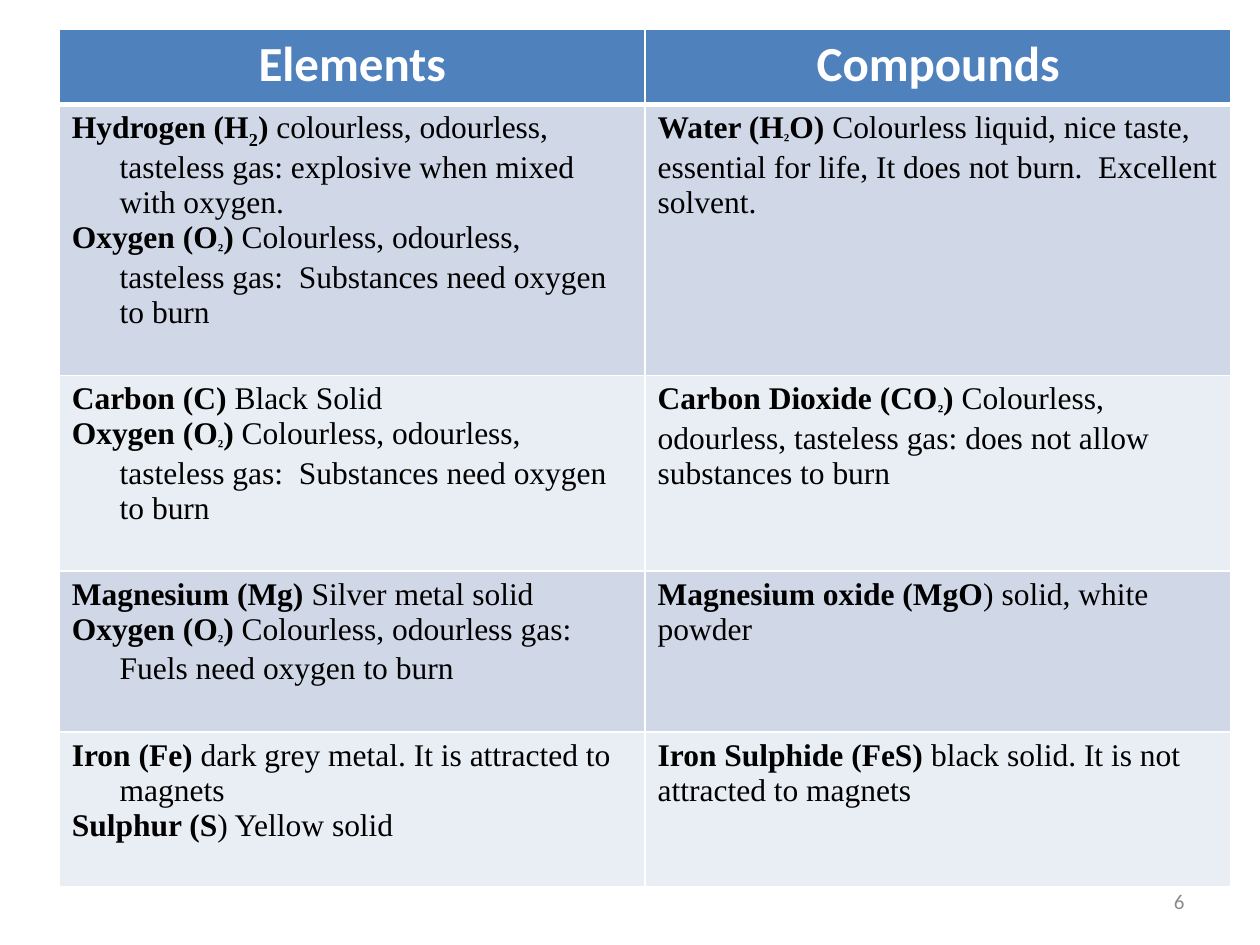
from lxml import etree
from pptx import Presentation
from pptx.dml.color import RGBColor
from pptx.enum.text import MSO_ANCHOR, PP_ALIGN
from pptx.oxml.ns import qn
from pptx.util import Inches, Pt

CENTER, RIGHT = PP_ALIGN.CENTER, PP_ALIGN.RIGHT
MIDDLE = MSO_ANCHOR.MIDDLE

HEADER = {"name": "Calibri", "size": Pt(28), "bold": True}
BODY = {"name": "Times New Roman", "size": Pt(18)}
NUMBER = {"name": "Calibri", "size": Pt(12), "bold": False}
BAND_FILLS = ["D0D8E8", "E9EDF4"]
ROW_HEIGHTS = [0.6, 2.15, 1.55, 1.28, 1.23]
HEADINGS = ["Elements", "Compounds"]

OXYGEN = ("Oxygen (O_²_)", " Colourless, odourless, tasteless gas:  Substances need oxygen to burn")
ROWS = [
    ([("Hydrogen (H_2_)", " colourless, odourless, tasteless gas: explosive when mixed with oxygen."),
      OXYGEN],
     [("Water (H_²_O)", " Colourless liquid, nice taste, essential for life, It does not burn.  Excellent solvent.")]),
    ([("Carbon (C)", " Black Solid"),
      OXYGEN],
     [("Carbon Dioxide (CO_²_)", " Colourless, odourless, tasteless gas: does not allow substances to burn")]),
    ([("Magnesium (Mg)", " Silver metal solid"),
      ("Oxygen (O_²_)", " Colourless, odourless gas: Fuels need oxygen to burn")],
     [("Magnesium oxide (MgO", ") solid, white powder")]),
    ([("Iron (Fe)", " dark grey metal. It is attracted to magnets"),
      ("Sulphur (S", ") Yellow solid")],
     [("Iron Sulphide (FeS) ", "black solid. It is not attracted to magnets")]),
]


def add_span(para, text, color, formats):
    span = para.add_run()
    span.text = text
    for name, value in formats.items():
        setattr(span.font, name, value)
    span.font.color.rgb = RGBColor.from_string(color)
    return span


def style_cell(cell, fill, top=1, bottom=1):
    properties = cell._tc.get_or_add_tcPr()
    for side, width in {"lnL": 1, "lnR": 1, "lnT": top, "lnB": bottom}.items():
        line = etree.SubElement(properties, qn(f"a:{side}"), w=str(Pt(width)))
        solid = etree.SubElement(line, qn("a:solidFill"))
        etree.SubElement(solid, qn("a:srgbClr"), val="FFFFFF")
    cell.fill.solid()
    cell.fill.fore_color.rgb = RGBColor.from_string(fill)


deck = Presentation()
deck.slide_width, deck.slide_height = Inches(10), Inches(7.5)
page = deck.slides.add_slide(deck.slide_layouts[6])

table = page.shapes.add_table(
    len(ROW_HEIGHTS), len(HEADINGS),
    Inches(0.47), Inches(0.23), Inches(9.3), Inches(sum(ROW_HEIGHTS)),
).table
for row, height in zip(table.rows, ROW_HEIGHTS):
    row.height = Inches(height)

for column, heading in enumerate(HEADINGS):
    cell = table.cell(0, column)
    style_cell(cell, "4F81BD", bottom=3)
    para = cell.text_frame.paragraphs[0]
    para.alignment = CENTER
    add_span(para, heading, "FFFFFF", HEADER)

for row_index, row_cells in enumerate(ROWS, start=1):
    for column, substances in enumerate(row_cells):
        cell = table.cell(row_index, column)
        style_cell(cell, BAND_FILLS[(row_index - 1) % 2], top=3 if row_index == 1 else 1)
        frame = cell.text_frame
        for index, (name, description) in enumerate(substances):
            para = frame.add_paragraph() if index else frame.paragraphs[0]
            if column == 0:
                indent = para._p.get_or_add_pPr()
                indent.set("marL", str(Inches(0.38)))
                indent.set("indent", str(-Inches(0.38)))
            for part, text in enumerate(name.split("_")):
                span = add_span(para, text, "000000", BODY | {"bold": True})
                if part == 1:
                    span._r.get_or_add_rPr().set("baseline", "-25000")
            add_span(para, description, "000000", BODY | {"bold": False})

number_box = page.shapes.add_textbox(Inches(7.17), Inches(6.95), Inches(2.33), Inches(0.4))
number_box.text_frame.word_wrap = True
number_box.text_frame.vertical_anchor = MIDDLE
para = number_box.text_frame.paragraphs[0]
para.alignment = RIGHT
add_span(para, "6", "8C8C8C", NUMBER)

deck.save("out.pptx")
